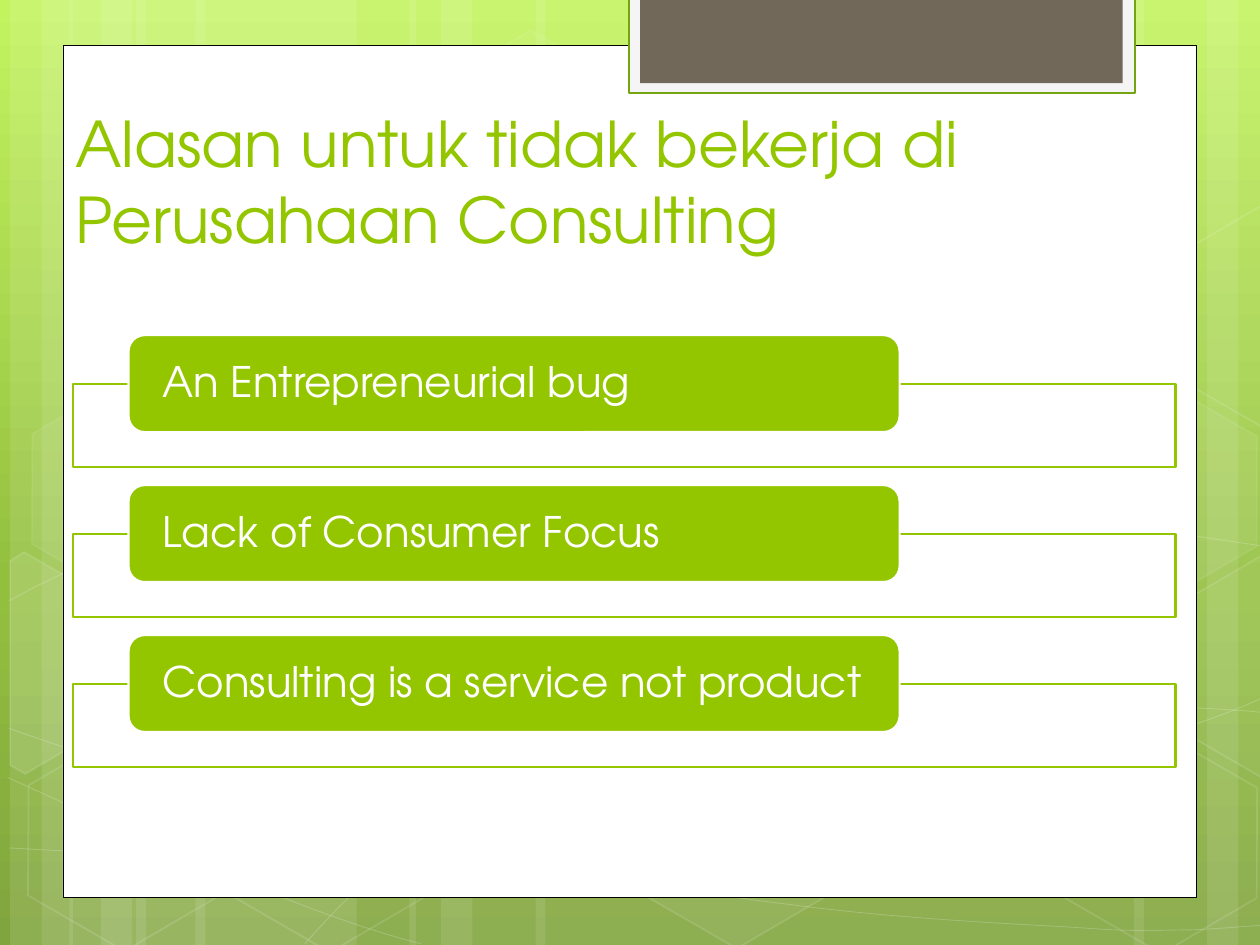
from copy import deepcopy
from dataclasses import dataclass
from math import cos, radians, sin
from typing import Optional

from pptx import Presentation
from pptx.dml.color import RGBColor
from pptx.enum.shapes import MSO_SHAPE
from pptx.enum.text import MSO_ANCHOR, PP_ALIGN
from pptx.oxml.ns import qn
from pptx.oxml.xmlchemy import OxmlElement
from pptx.util import Inches, Pt

FONT = "TeX Gyre Adventor"
TILT = 30
COLORS = {
    "white": "FFFFFF", "black": "000000", "green": "94C600",
    "tab": "F5F5F5", "tab_line": "74A510", "tab_core": "71685A",
    "sky": "C3F35F", "leaf": "93BF3F", "moss": "81A53E",
}


@dataclass
class Style:
    fill: Optional[str] = None
    fill_alpha: int = 100
    line: Optional[str] = None
    width: float = 1
    line_alpha: int = 100


@dataclass
class Hexagon:
    x: float
    y: float
    fill_alpha: int
    line_alpha: int


@dataclass
class CutHexagon:
    center: tuple
    points: list
    fill_alpha: int


@dataclass
class Curve:
    knots: list
    straight: Optional[int] = None


STRIPES = [(1.08, 1.75), (0.08, 0.5), (0.33, 0.83), (1.55, 1.75), (0.55, 0.5), (0.8, 0.83),
           (7.33, 1.75), (9.58, 0.5), (9, 0.83), (4.25, 3.08), (3.25, 0.5), (3.5, 0.83)]

CURVES = [
    Curve([(0.07, 6.73), (0.61, 6.76), (1.15, 6.79), (1.9, 6.78), (2.65, 6.77), (3.58, 6.75),
           (4.58, 6.65), (5.58, 6.55), (7, 6.36), (7.92, 6.17), (8.83, 5.98), (9.77, 5.68),
           (10.07, 5.51)]),
    Curve([(0.07, 4.77), (0.36, 4.61), (0.65, 4.46), (1.21, 4.31), (1.78, 4.16), (2.59, 3.94),
           (3.47, 3.87), (4.36, 3.8), (5.44, 3.79), (6.54, 3.87), (7.64, 3.95), (9.47, 4.26),
           (10.07, 4.34)]),
    Curve([(0.06, 6.17), (1.27, 6.72), (2.47, 7.27), (3.34, 7.49)]),
    Curve([(0.07, 5.78), (0.38, 5.89), (0.7, 6), (1.28, 6.16), (1.86, 6.31), (2.73, 6.56),
           (3.57, 6.73), (4.4, 6.9), (5.45, 7.08), (6.28, 7.18), (7.11, 7.29), (8, 7.33),
           (8.53, 7.36), (9.05, 7.4), (9.19, 7.38), (9.45, 7.38), (9.71, 7.37), (9.89, 7.35),
           (10.07, 7.34)]),
    Curve([(2.42, 7.49), (2.6, 7.29), (2.78, 7.09), (3.02, 6.91), (3.26, 6.73), (3.6, 6.53),
           (3.88, 6.39), (4.16, 6.25), (4.33, 6.19), (4.7, 6.09), (5.06, 5.99), (5.73, 5.85),
           (6.08, 5.78), (6.44, 5.71), (6.49, 5.71), (6.8, 5.69), (7.11, 5.66), (7.6, 5.63),
           (7.94, 5.62), (8.29, 5.61), (8.86, 5.62), (8.86, 5.62), (9.53, 5.62), (9.71, 5.63),
           (9.88, 5.64), (9.97, 5.65), (10.06, 5.66), (10.03, 5.65), (10.06, 5.66)], straight=21),
]

HONEYCOMB = [
    Hexagon(3.34, 0.36, 4, 8),
    Hexagon(4.97, 5.89, 6, 12),
    CutHexagon((0.36, 5.35), [(0.08, 4.45), (0.19, 4.38), (0.96, 4.82), (0.95, 5.7),
                              (0.2, 6.14), (0.08, 6.07)], 10),
    Hexagon(0.11, 5.91, 0, 12),
    Hexagon(0.14, 3.12, 7, 8),
    Hexagon(1.74, 5.92, 0, 12),
    Hexagon(7.53, 4.53, 10, 12),
    Hexagon(8.34, 5.93, 0, 12),
    Hexagon(8.34, 3.14, 7, 8),
    CutHexagon((9.85, 5.2), [(9.26, 4.85), (10.01, 4.41), (10.09, 4.46), (10.09, 6.13),
                             (10.02, 6.17), (9.26, 5.73)], 4),
    CutHexagon((9.85, 2.41), [(9.26, 2.07), (10.01, 1.63), (10.1, 1.68), (10.09, 3.35),
                              (10.02, 3.39), (9.26, 2.95)], 0),
]

REASONS = ["An Entrepreneurial bug", "Lack of Consumer Focus", "Consulting is a service not product"]


def rgb(name: str) -> RGBColor:
    return RGBColor.from_string(COLORS[name])


def paint(fill, parent, color: str, alpha: int) -> None:
    fill.fore_color.rgb = rgb(color)
    if alpha < 100:
        node = OxmlElement("a:alpha")
        node.set("val", str(alpha * 1000))
        parent.find(qn("a:solidFill"))[0].append(node)


def apply_style(sp, style: Style) -> None:
    sp.shadow.inherit = False
    spPr = sp._element.spPr
    if style.fill and style.fill_alpha:
        sp.fill.solid()
        paint(sp.fill, spPr, style.fill, style.fill_alpha)
    else:
        sp.fill.background()
    if style.line:
        sp.line.width = Pt(style.width)
        sp.line.fill.solid()
        paint(sp.line.fill, spPr.find(qn("a:ln")), style.line, style.line_alpha)
    else:
        sp.line.fill.background()


def add_box(s, x: float, y: float, w: float, h: float, style: Style, kind=MSO_SHAPE.RECTANGLE):
    sp = s.shapes.add_shape(kind, Inches(x), Inches(y), Inches(w), Inches(h))
    apply_style(sp, style)
    return sp


def add_path(s, points: list, style: Style, close: bool):
    (x, y), *rest = [(Inches(px), Inches(py)) for px, py in points]
    fb = s.shapes.build_freeform(x, y)
    fb.add_line_segments(rest, close=close)
    sp = fb.convert_to_shape()
    apply_style(sp, style)
    return sp


def add_curve(s, curve: Curve) -> None:
    sp = add_path(s, curve.knots, Style(line="white", width=0.5, line_alpha=20), close=False)
    segments = list(sp._element.iter(qn("a:lnTo")))
    if curve.straight is not None:
        del segments[curve.straight]
    for first, *others in zip(segments[::3], segments[1::3], segments[2::3]):
        bezier = OxmlElement("a:cubicBezTo")
        first.addprevious(bezier)
        for segment in (first, *others):
            bezier.append(segment[0])
            segment.getparent().remove(segment)


def add_cut_hexagon(s, cell: CutHexagon) -> None:
    cx, cy = cell.center
    c, n = cos(radians(TILT)), sin(radians(TILT))
    upright = [(cx + c * (x - cx) + n * (y - cy), cy - n * (x - cx) + c * (y - cy))
               for x, y in cell.points]
    sp = add_path(s, upright, Style("white", cell.fill_alpha, "white", 1, 12), close=True)
    sp.rotation = TILT


def add_hexagon(s, cell: Hexagon) -> None:
    style = Style("white", cell.fill_alpha, "white", 1, cell.line_alpha)
    sp = add_box(s, cell.x, cell.y, 1.75, 1.52, style, MSO_SHAPE.HEXAGON)
    sp.adjustments[0] = 0.285
    sp.rotation = TILT


def add_text(s, text: str, x: float, y: float, w: float, h: float, *, size: int, color: str,
             anchor, inset=(0.1, 0.05), spacing: float = 1.0) -> None:
    tf = s.shapes.add_textbox(Inches(x), Inches(y), Inches(w), Inches(h)).text_frame
    tf.word_wrap = True
    tf.vertical_anchor = anchor
    tf.margin_left = tf.margin_right = Inches(inset[0])
    tf.margin_top = tf.margin_bottom = Inches(inset[1])
    p = tf.paragraphs[0]
    p.alignment = PP_ALIGN.LEFT
    p.line_spacing = spacing
    r = p.add_run()
    r.text = text
    r.font.name = FONT
    r.font.size = Pt(size)
    r.font.color.rgb = rgb(color)


def add_background(s) -> None:
    fill = s.background.fill
    fill.gradient()
    fill.gradient_angle = 270
    stops = s._element.find(".//" + qn("a:gsLst"))
    stops.append(deepcopy(stops[-1]))
    for stop, (pos, color) in zip(fill.gradient_stops, [(0, "sky"), (0.62, "leaf"), (1, "moss")]):
        stop.position = pos
        stop.color.rgb = rgb(color)


def add_reason(s, text: str, y: float) -> None:
    add_box(s, 0.58, y + 0.39, 8.75, 0.66, Style("white", 90, "green", 1.25))
    add_box(s, 1.02, y, 6.12, 0.77, Style("green", line="white", width=1.25),
            MSO_SHAPE.ROUNDED_RECTANGLE)
    add_text(s, text, 1.06, y + 0.04, 6.05, 0.7, size=24, color="white",
             anchor=MSO_ANCHOR.MIDDLE, inset=(0.23, 0), spacing=0.9)


def main() -> None:
    prs = Presentation()
    prs.slide_width, prs.slide_height = Inches(10), Inches(7.5)
    s = prs.slides.add_slide(prs.slide_layouts[6])
    add_background(s)
    for x, w in STRIPES:
        add_box(s, x, 0, w, 7.5, Style("white", 10))
    for curve in CURVES:
        add_curve(s, curve)
    for cell in HONEYCOMB:
        (add_hexagon if isinstance(cell, Hexagon) else add_cut_hexagon)(s, cell)
    add_box(s, 0.5, 0.36, 9, 6.76, Style("white", line="black", width=0.5))
    add_box(s, 4.99, -0.02, 4.02, 0.76, Style("tab", line="tab_line", width=1.25))
    add_box(s, 5.08, -0.02, 3.83, 0.68, Style("tab_core"))
    add_text(s, "Alasan untuk tidak bekerja di Perusahaan Consulting", 0.5, 1.05, 8.17, 1.03,
             size=36, color="green", anchor=MSO_ANCHOR.BOTTOM)
    for i, text in enumerate(REASONS):
        add_reason(s, text, 2.66 + 1.19 * i)
    prs.save("out.pptx")


if __name__ == "__main__":
    main()
